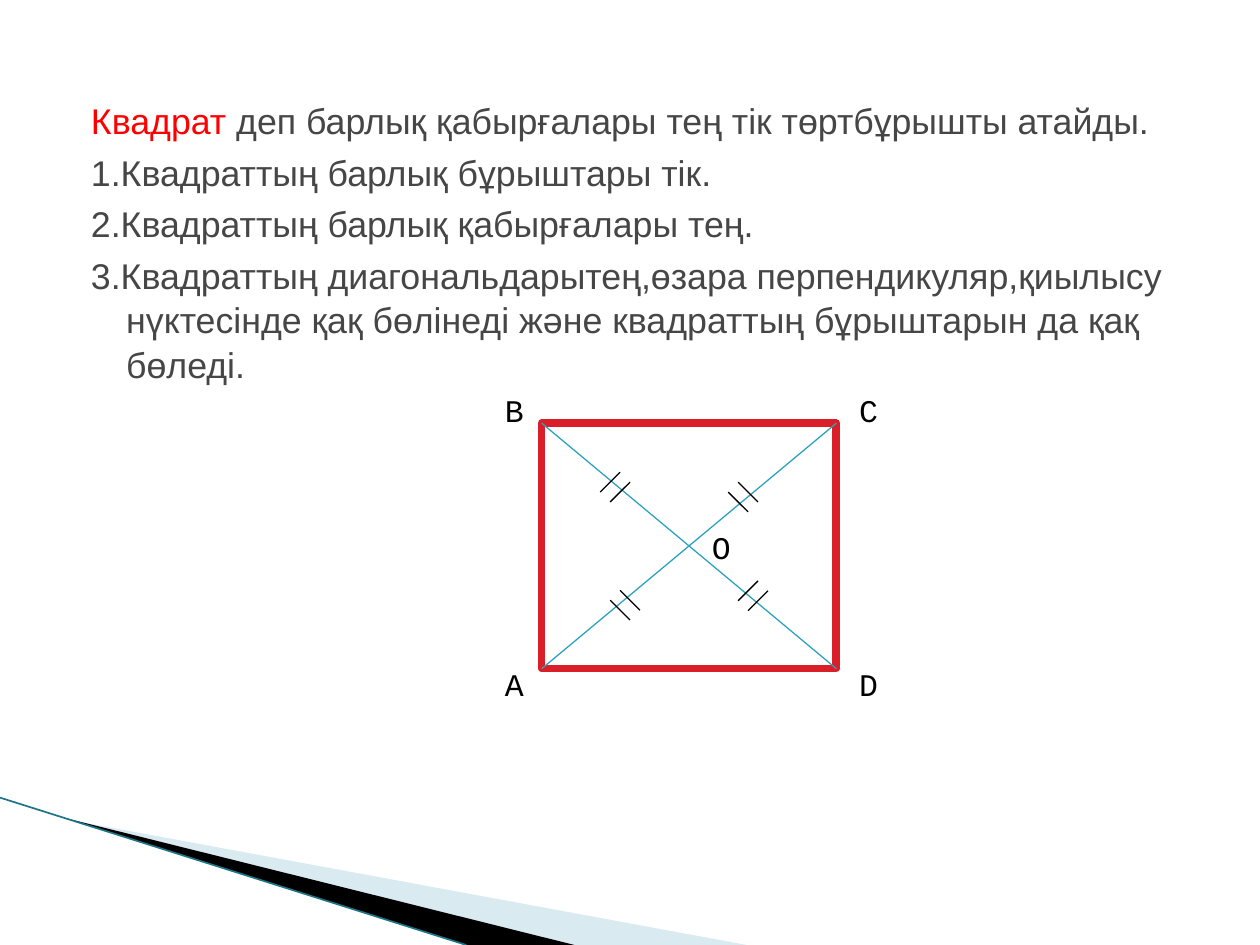
from typing import NamedTuple

from lxml import etree
from pptx import Presentation
from pptx.dml.color import RGBColor
from pptx.enum.shapes import MSO_CONNECTOR, MSO_SHAPE
from pptx.enum.text import MSO_ANCHOR, MSO_AUTO_SIZE, PP_ALIGN
from pptx.oxml.ns import qn
from pptx.util import Cm, Pt

STRAIGHT = MSO_CONNECTOR.STRAIGHT
RECTANGLE = MSO_SHAPE.RECTANGLE
TOP = MSO_ANCHOR.TOP
NO_AUTOFIT = MSO_AUTO_SIZE.NONE
LEFT = PP_ALIGN.LEFT

COLORS = {
    "white": "FFFFFF",
    "black": "000000",
    "body": "464646",
    "term": "FF0000",
    "side": "DA1F28",
    "diagonal": "2DA2BF",
    "pale_wedge": "A0CBDC",
    "wedge_edge": "1B7587",
}

TERM = "Квадрат"
PARAGRAPHS = [
    " деп барлық қабырғалары тең тік төртбұрышты атайды.",
    "1.Квадраттың барлық бұрыштары тік.",
    "2.Квадраттың барлық қабырғалары тең.",
    "3.Квадраттың диагональдарытең,өзара перпендикуляр,қиылысу нүктесінде "
    "қақ бөлінеді және квадраттың бұрыштарын да қақ бөледі.",
]

# Corners of the square, in centimetres
X1, Y1, X2, Y2 = 10.92, 8.53, 16.86, 13.48
TICK_HALF = 0.2
PAIR_HALF_GAP = 0.1


class Label(NamedTuple):
    text: str
    x: float
    y: float


class TickPair(NamedTuple):
    """Two equal-length marks around (x, y); lean is 1 for / and -1 for \\."""
    x: float
    y: float
    lean: int


LABELS = [
    Label("B", 9.93, 7.75),
    Label("C", 17.07, 7.75),
    Label("D", 17.07, 13.28),
    Label("A", 9.93, 13.28),
    Label("O", 14.1, 10.52),
]
TICK_PAIRS = [
    TickPair(12.4, 9.82, 1),
    TickPair(15.18, 12.01, 1),
    TickPair(12.6, 12.2, -1),
    TickPair(14.98, 10.02, -1),
]


def rgb(name: str) -> RGBColor:
    return RGBColor.from_string(COLORS[name])


def add_line(slide, x1: float, y1: float, x2: float, y2: float,
             color: str, width: float = 0.75) -> None:
    line = slide.shapes.add_connector(STRAIGHT, Cm(x1), Cm(y1), Cm(x2), Cm(y2))
    line.line.color.rgb = rgb(color)
    line.line.width = Pt(width)
    etree.SubElement(line._element.spPr, qn("a:effectLst"))


def add_wedge(slide, points: list[tuple[float, float]], color: str,
              alpha: int = 100) -> None:
    """Draw a filled polygon; alpha is its opacity in percent."""
    corners = [(Cm(x), Cm(y)) for x, y in points]
    builder = slide.shapes.build_freeform(*corners[0])
    builder.add_line_segments(corners[1:], close=True)
    sp = builder.convert_to_shape()
    sp.shadow.inherit = False
    sp.fill.solid()
    sp.fill.fore_color.rgb = rgb(color)
    sp.line.fill.background()
    if alpha < 100:
        clr = sp._element.spPr.find(qn("a:solidFill")).find(qn("a:srgbClr"))
        etree.SubElement(clr, qn("a:alpha"), val=str(alpha * 1000))


def add_decoration(slide) -> None:
    add_wedge(slide, [(1.4, 16.53), (15.05, 19.05), (11.58, 19.05)],
              "pale_wedge", 40)
    add_wedge(slide, [(1.35, 16.5), (11.58, 19.05), (9.4, 19.05)], "black")
    add_line(slide, 0, 16.08, 9.4, 19.05, "wedge_edge", 0.95)


def add_square(slide) -> None:
    sp = slide.shapes.add_shape(RECTANGLE, Cm(X1), Cm(Y1),
                                Cm(X2 - X1), Cm(Y2 - Y1))
    sp.shadow.inherit = False
    sp.fill.solid()
    sp.fill.fore_color.rgb = rgb("white")
    sp.line.color.rgb = rgb("side")
    sp.line.width = Pt(4.33)
    etree.SubElement(sp._element.spPr.find(qn("a:ln")), qn("a:round"))


def fill_body(body) -> None:
    body.left, body.top, body.width, body.height = (
        Cm(1.27), Cm(1.83), Cm(22.86), Cm(15.24))
    tf = body.text_frame
    tf.word_wrap = True
    tf.auto_size = NO_AUTOFIT
    tf.vertical_anchor = TOP
    for i, text in enumerate(PARAGRAPHS):
        p = tf.paragraphs[0] if i == 0 else tf.add_paragraph()
        pPr = p._p.get_or_add_pPr()
        pPr.set("marL", str(Cm(1.02)))
        pPr.set("indent", str(Cm(-0.71)))
        etree.SubElement(pPr, qn("a:buNone"))
        p.alignment = LEFT
        p.line_spacing = 1.04
        p.space_before = Pt(4 if i else 0)
        if i == 0:
            p.add_run().text = TERM
        p.add_run().text = text
        for r in p.runs:
            r.font.name = "Arial"
            r.font.size = Pt(20.4)
            r.font.color.rgb = rgb("term" if r.text == TERM else "body")


def add_ticks(slide, pair: TickPair) -> None:
    for shift in (-PAIR_HALF_GAP, PAIR_HALF_GAP):
        x, y = pair.x + shift, pair.y + shift * pair.lean
        dx = TICK_HALF * pair.lean
        add_line(slide, x + dx, y - TICK_HALF, x - dx, y + TICK_HALF, "black")


def add_label(slide, label: Label) -> None:
    box = slide.shapes.add_textbox(Cm(label.x), Cm(label.y), Cm(0.89), Cm(1.02))
    tf = box.text_frame
    tf.word_wrap = False
    tf.text = label.text
    font = tf.paragraphs[0].runs[0].font
    font.name = "Courier New"
    font.size = Pt(18)
    font.color.rgb = rgb("black")


def main() -> None:
    prs = Presentation()
    prs.slide_width, prs.slide_height = Cm(25.4), Cm(19.05)
    slide = prs.slides.add_slide(prs.slide_layouts[1])
    title = slide.shapes.title._element
    title.getparent().remove(title)

    add_decoration(slide)
    add_square(slide)
    fill_body(slide.placeholders[1])
    add_line(slide, X1, Y1, X2, Y2, "diagonal")
    add_line(slide, X1, Y2, X2, Y1, "diagonal")
    for pair in TICK_PAIRS:
        add_ticks(slide, pair)
    for label in LABELS:
        add_label(slide, label)
    prs.save("out.pptx")


if __name__ == "__main__":
    main()
